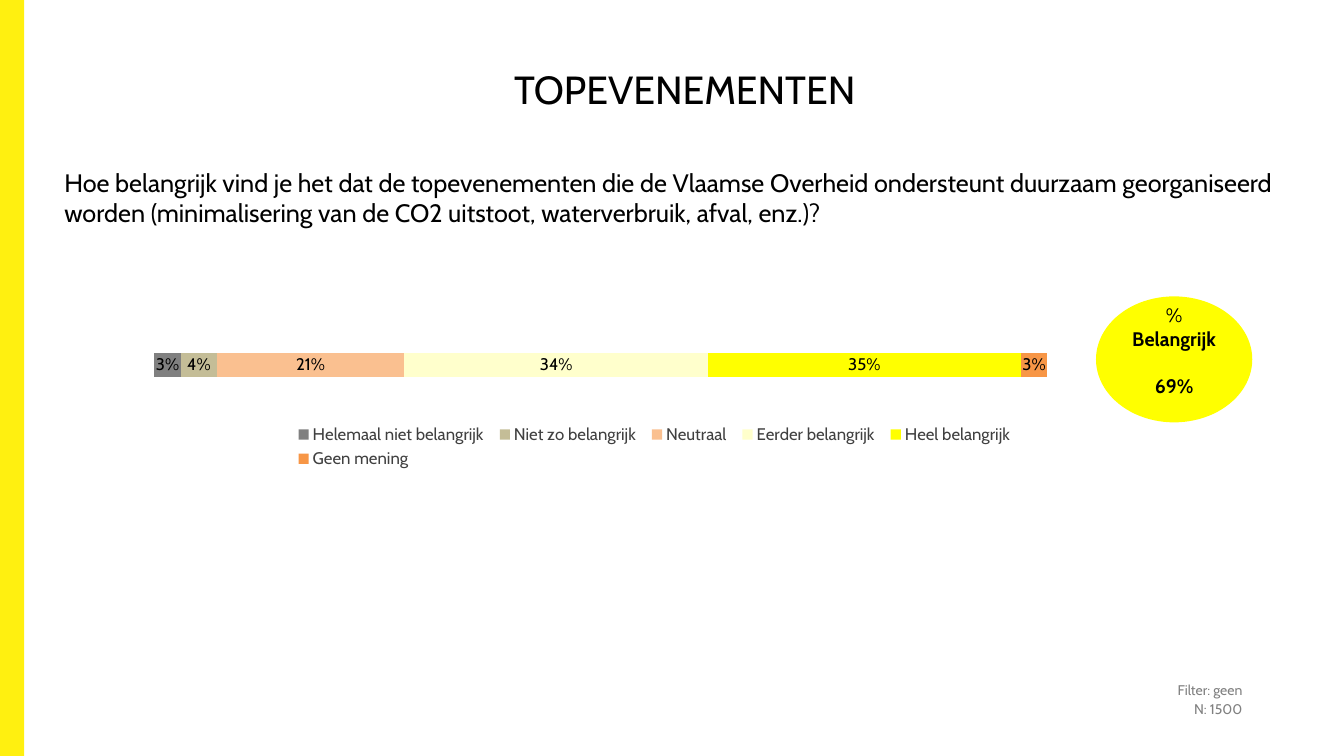
from dataclasses import dataclass

import pptx
import pptx.chart.data
import pptx.dml.color
import pptx.enum.chart
import pptx.enum.shapes
import pptx.enum.text
import pptx.oxml
import pptx.oxml.ns
import pptx.util
from pptx.util import Inches

FONT = "Cabin"
BLACK = "000000"
GREY = "808080"
YELLOW = "FFFF00"
PERCENT = "###0%"
Align = pptx.enum.text.PP_ALIGN
Anchor = pptx.enum.text.MSO_ANCHOR
ShapeKind = pptx.enum.shapes.MSO_SHAPE


@dataclass
class Answer:
    name: str
    share: float
    color: str


@dataclass
class Line:
    text: str
    size: float
    align: Align
    color: str = BLACK
    bold: bool = False
    space_before: float = 0


@dataclass
class Area:
    left: float
    top: float
    width: float
    height: float

    def lengths(self) -> tuple:
        return tuple(Inches(n) for n in (self.left, self.top, self.width, self.height))


ANSWERS = [
    Answer("Helemaal niet belangrijk", 0.03, GREY),
    Answer("Niet zo belangrijk", 0.04, "C4BD97"),
    Answer("Neutraal", 0.21, "FAC090"),
    Answer("Eerder belangrijk", 0.34, "FFFFCC"),
    Answer("Heel belangrijk", 0.35, YELLOW),
    Answer("Geen mening", 0.03, "F79646"),
]
QUESTION = (
    "Hoe belangrijk vind je het dat de topevenementen die de Vlaamse Overheid "
    "ondersteunt duurzaam georganiseerd worden (minimalisering van de CO2 uitstoot, "
    "waterverbruik, afval, enz.)?"
)


def rgb(color: str) -> pptx.dml.color.RGBColor:
    return pptx.dml.color.RGBColor.from_string(color)


def style_font(font, size: float, color: str, bold: bool = False) -> None:
    font.name = FONT
    font.size = pptx.util.Pt(size)
    font.bold = bold
    font.color.rgb = rgb(color)


def write_lines(shape, lines: list[Line], anchor: Anchor = Anchor.TOP) -> None:
    frame = shape.text_frame
    frame.word_wrap = True
    frame.auto_size = pptx.enum.text.MSO_AUTO_SIZE.NONE
    frame.vertical_anchor = anchor
    for index, line in enumerate(lines):
        para = frame.add_paragraph() if index else frame.paragraphs[0]
        para.alignment = line.align
        para.space_before = pptx.util.Pt(line.space_before)
        span = para.add_run()
        span.text = line.text
        style_font(span.font, line.size, line.color, line.bold)


def add_text(page, area: Area, lines: list[Line]) -> None:
    write_lines(page.shapes.add_textbox(*area.lengths()), lines)


def add_filled(page, kind: ShapeKind, area: Area, color: str):
    shape = page.shapes.add_shape(kind, *area.lengths())
    shape.shadow.inherit = False
    shape.fill.solid()
    shape.fill.fore_color.rgb = rgb(color)
    shape.line.fill.background()
    return shape


def set_layout(parent, position: int, area: Area, target: str = "") -> None:
    """Place a chart part by fractions of the chart area."""
    for old in parent.findall(pptx.oxml.ns.qn("c:layout")):
        parent.remove(old)
    inner = f'<c:layoutTarget val="{target}"/>' if target else ""
    modes = '<c:xMode val="edge"/><c:yMode val="edge"/>'
    sizes = (
        f'<c:x val="{area.left}"/><c:y val="{area.top}"/>'
        f'<c:w val="{area.width}"/><c:h val="{area.height}"/>'
    )
    parent.insert(position, pptx.oxml.parse_xml(
        f'<c:layout {pptx.oxml.ns.nsdecls("c")}><c:manualLayout>'
        f"{inner}{modes}{sizes}</c:manualLayout></c:layout>"
    ))


def add_answer_chart(page, area: Area) -> None:
    data = pptx.chart.data.CategoryChartData(number_format=PERCENT)
    data.categories = ["1"]
    for answer in ANSWERS:
        data.add_series(answer.name, [answer.share])
    chart = page.shapes.add_chart(
        pptx.enum.chart.XL_CHART_TYPE.BAR_STACKED_100, *area.lengths(), data
    ).chart
    chart.has_title = False
    style_font(chart.font, 10, BLACK)
    chart.category_axis.visible = False
    chart.value_axis.visible = False
    chart.value_axis.has_major_gridlines = False
    chart.value_axis.minimum_scale = 0
    chart.value_axis.maximum_scale = 1

    plot = chart.plots[0]
    plot.gap_width = 150
    plot.overlap = 100
    plot.vary_by_categories = False
    for series, answer in zip(plot.series, ANSWERS):
        series.format.fill.solid()
        series.format.fill.fore_color.rgb = rgb(answer.color)
        labels = series.data_labels
        labels.show_value = True
        labels.number_format = PERCENT
        labels.number_format_is_linked = False
        labels.position = pptx.enum.chart.XL_LABEL_POSITION.CENTER
        style_font(labels.font, 12, BLACK)

    chart.has_legend = True
    legend = chart.legend
    legend.position = pptx.enum.chart.XL_LEGEND_POSITION.BOTTOM
    legend.include_in_layout = False
    style_font(legend.font, 12, "404040")
    plot_area = chart.element.find(".//" + pptx.oxml.ns.qn("c:plotArea"))
    legend_part = chart.element.find(".//" + pptx.oxml.ns.qn("c:legend"))
    set_layout(plot_area, 0, Area(0, 0.06, 1, 0.39), "inner")
    set_layout(legend_part, 1, Area(0.15, 0.61, 0.82, 0.34))


def main() -> None:
    deck = pptx.Presentation()
    deck.slide_width = Inches(13.33)
    deck.slide_height = Inches(7.5)
    page = deck.slides.add_slide(deck.slide_layouts[5])

    add_filled(page, ShapeKind.RECTANGLE, Area(0, 0, 0.24, 7.5), "FFF010")
    add_answer_chart(page, Area(1.53, 3.23, 8.86, 1.54))

    badge = add_filled(
        page, ShapeKind.FLOWCHART_CONNECTOR, Area(10.87, 2.94, 1.55, 1.25), YELLOW
    )
    badge.text_frame.margin_top = 0
    badge.text_frame.margin_bottom = Inches(0.18)
    write_lines(badge, [
        Line("%", 14, Align.CENTER),
        Line("Belangrijk", 14, Align.CENTER, bold=True),
        Line("69%", 14, Align.CENTER, bold=True, space_before=17),
    ], Anchor.MIDDLE)

    add_text(page, Area(8.61, 6.71, 3.81, 0.53), [
        Line("Filter: geen", 10, Align.RIGHT, GREY),
        Line("N: 1500", 10, Align.RIGHT, GREY, space_before=2),
    ])

    title = page.shapes.title
    title.left, title.top, title.width, title.height = Area(0.24, 0.6, 13.1, 1.25).lengths()
    write_lines(title, [Line("TOPEVENEMENTEN", 28, Align.CENTER)])
    add_text(page, Area(0.54, 1.61, 12.56, 1.9), [Line(QUESTION, 18, Align.LEFT)])

    deck.save("out.pptx")


if __name__ == "__main__":
    main()
